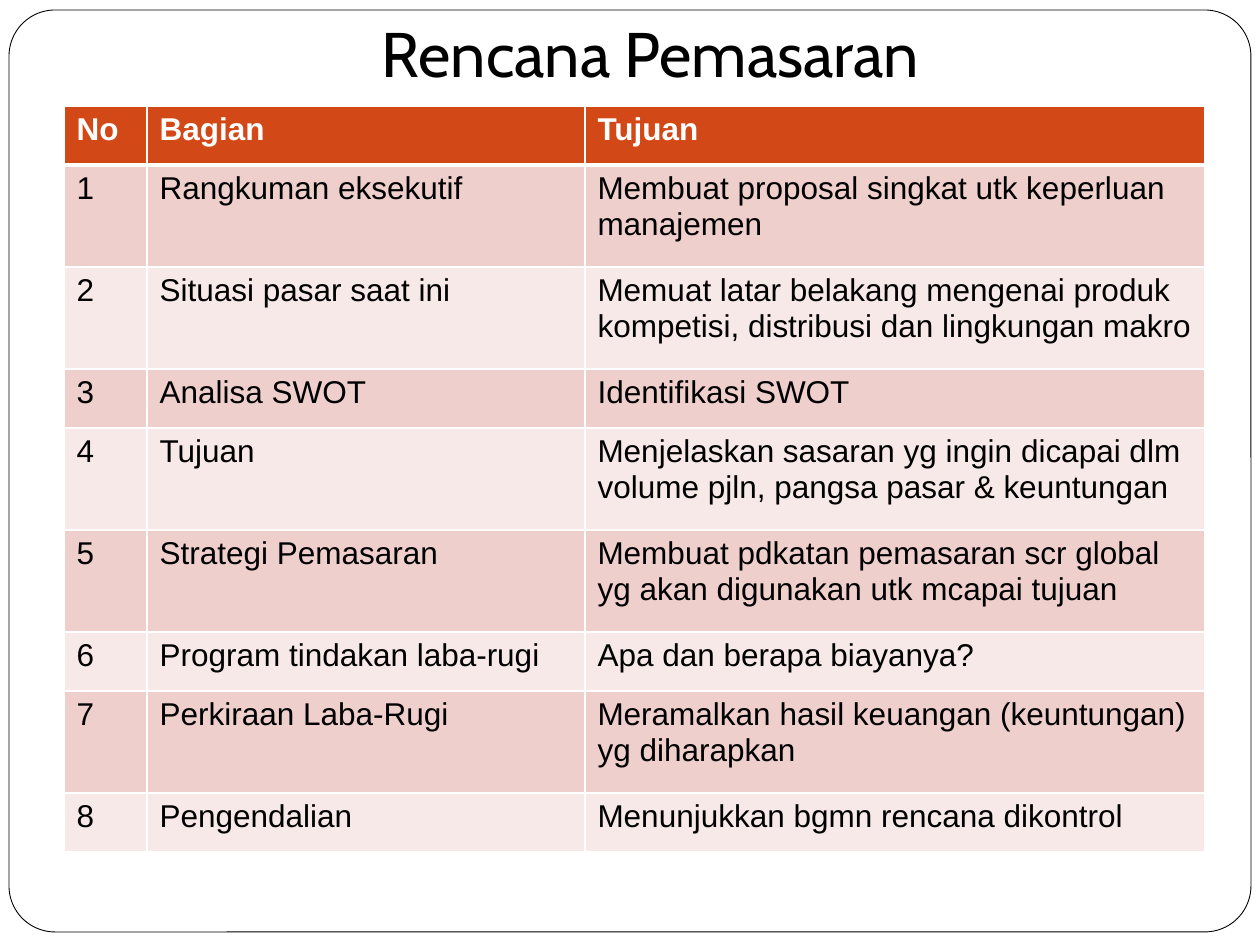
from typing import NamedTuple

from lxml.etree import SubElement
from pptx import Presentation
from pptx.dml.color import RGBColor
from pptx.enum.shapes import MSO_SHAPE as Shape
from pptx.enum.text import MSO_ANCHOR as Anchor, MSO_AUTO_SIZE as AutoSize, PP_ALIGN as Align
from pptx.oxml.ns import qn
from pptx.util import Pt

PX = 914400 / 126

BLACK = RGBColor(0x00, 0x00, 0x00)
WHITE = RGBColor(0xFF, 0xFF, 0xFF)
HEADER_ORANGE = RGBColor(0xD3, 0x48, 0x17)
BANDS = (RGBColor(0xEF, 0xCF, 0xCC), RGBColor(0xF7, 0xE9, 0xE8))

COLUMN_WIDTHS = (83, 438, 620)
SHORT_ROW, TALL_ROW = 59, 102


class Section(NamedTuple):
    name: str
    purpose: str
    height: int = TALL_ROW


SECTIONS = (
    Section("Rangkuman eksekutif", "Membuat proposal singkat utk keperluan manajemen"),
    Section("Situasi pasar saat ini",
            "Memuat latar belakang mengenai produk kompetisi, distribusi dan lingkungan makro"),
    Section("Analisa SWOT", "Identifikasi SWOT", SHORT_ROW),
    Section("Tujuan",
            "Menjelaskan sasaran yg ingin dicapai dlm volume pjln, pangsa pasar & keuntungan"),
    Section("Strategi Pemasaran",
            "Membuat pdkatan pemasaran scr global yg akan digunakan utk mcapai tujuan"),
    Section("Program tindakan laba-rugi", "Apa dan berapa biayanya?", SHORT_ROW),
    Section("Perkiraan Laba-Rugi", "Meramalkan hasil keuangan (keuntungan) yg diharapkan"),
    Section("Pengendalian", "Menunjukkan bgmn rencana dikontrol", SHORT_ROW),
)


def px(length: int) -> int:
    return round(length * PX)


def format_run(run, font_name: str, size: int, color: RGBColor, bold: bool = False) -> None:
    font = run.font
    font.name, font.size, font.bold = font_name, Pt(size), bold
    font.color.rgb = color


def add_frame(slide) -> None:
    """Draw the rounded page border behind everything else."""
    frame = slide.shapes.add_shape(Shape.ROUNDED_RECTANGLE, px(9), px(10), px(1242), px(922))
    frame.adjustments[0] = 0.05
    frame.shadow.inherit = False
    frame.fill.solid()
    frame.fill.fore_color.rgb = WHITE
    frame.line.color.rgb = BLACK
    frame.line.width = Pt(0.5)
    slide.shapes._spTree.insert(2, frame._element)


def set_title(slide, text: str) -> None:
    title = slide.shapes.title
    title.left, title.top, title.width, title.height = map(px, (134, 35, 1033, 68))
    text_frame = title.text_frame
    text_frame.text = text
    text_frame.auto_size = AutoSize.NONE
    text_frame.vertical_anchor = Anchor.BOTTOM
    text_frame.margin_bottom = Pt(7.2)
    heading = text_frame.paragraphs[0]
    heading.alignment = Align.CENTER
    format_run(heading.runs[0], "Cabin", 36, BLACK)


def set_borders(cell, top: int = 1, bottom: int = 1) -> None:
    """Give the cell white borders; must run before its fill is set."""
    properties = cell._tc.get_or_add_tcPr()
    for side, width in (("L", 1), ("R", 1), ("T", top), ("B", bottom)):
        border = SubElement(properties, qn(f"a:ln{side}"), w=str(Pt(width)))
        SubElement(SubElement(border, qn("a:solidFill")), qn("a:srgbClr"), val=str(WHITE))


def fill_cell(cell, text: str, row: int) -> None:
    is_header = row == 0
    set_borders(cell, top=3 if row == 1 else 1, bottom=3 if is_header else 1)
    cell.fill.solid()
    cell.fill.fore_color.rgb = HEADER_ORANGE if is_header else BANDS[(row - 1) % 2]
    cell.text_frame.text = text
    run = cell.text_frame.paragraphs[0].runs[0]
    format_run(run, "Arial", 18, WHITE if is_header else BLACK, bold=is_header)


def add_plan_table(slide) -> None:
    rows = [("No", "Bagian", "Tujuan")]
    rows += [(str(number), section.name, section.purpose)
             for number, section in enumerate(SECTIONS, start=1)]
    heights = [SHORT_ROW] + [section.height for section in SECTIONS]
    table = slide.shapes.add_table(
        len(rows), len(COLUMN_WIDTHS), px(64), px(106),
        px(sum(COLUMN_WIDTHS)), px(sum(heights))).table
    for column, width in zip(table.columns, COLUMN_WIDTHS):
        column.width = px(width)
    for index, (texts, height) in enumerate(zip(rows, heights)):
        table.rows[index].height = px(height)
        for cell, text in zip(table.rows[index].cells, texts):
            fill_cell(cell, text, index)


def main() -> None:
    presentation = Presentation()
    presentation.slide_width, presentation.slide_height = px(1260), px(945)
    slide = presentation.slides.add_slide(presentation.slide_layouts[5])
    add_frame(slide)
    set_title(slide, "Rencana Pemasaran")
    add_plan_table(slide)
    presentation.save("out.pptx")


if __name__ == "__main__":
    main()
